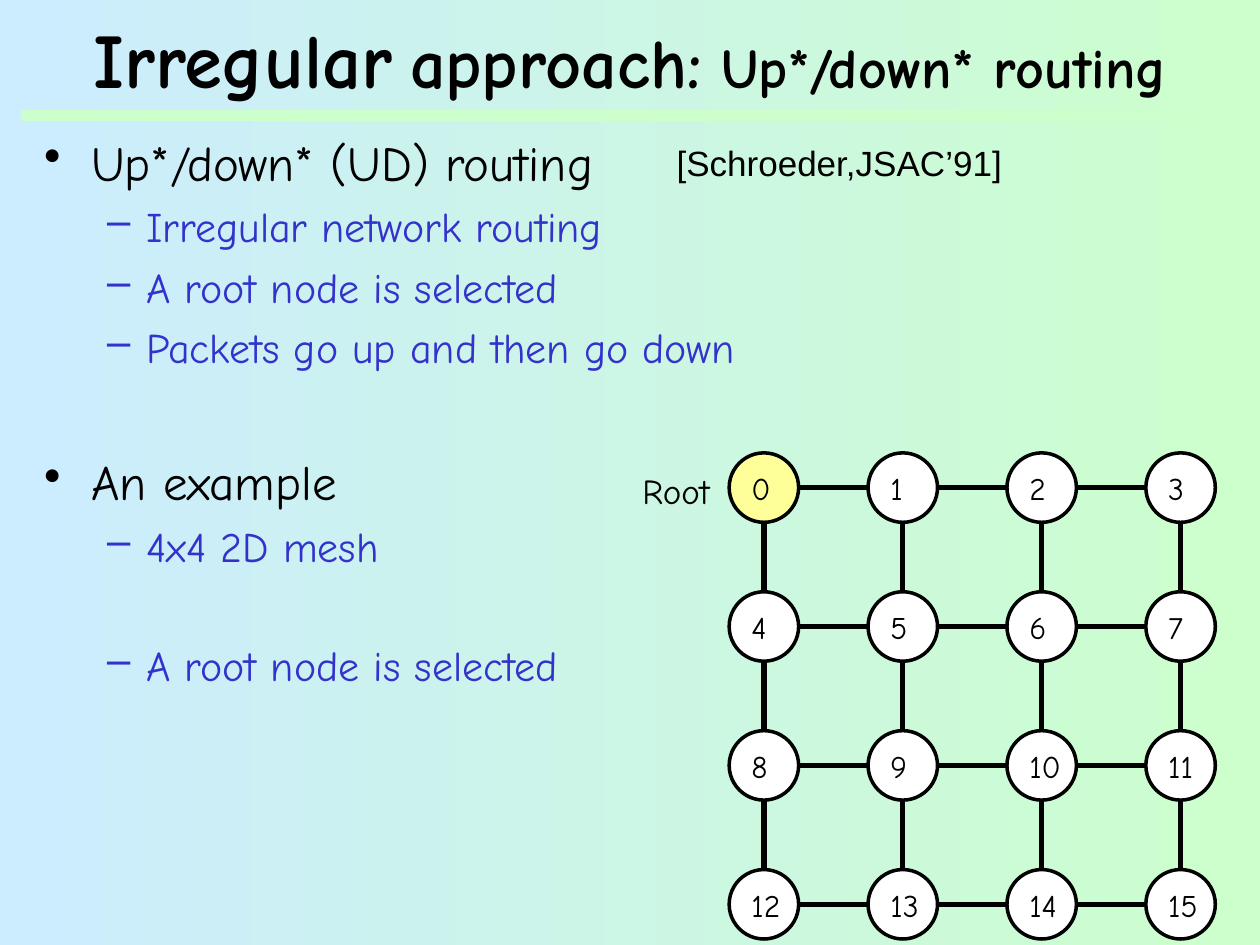
from lxml import etree
from pptx import Presentation
from pptx.dml.color import RGBColor
from pptx.enum.shapes import MSO_CONNECTOR, MSO_SHAPE
from pptx.enum.text import MSO_ANCHOR, PP_ALIGN
from pptx.oxml.ns import qn
from pptx.util import Cm, Pt

STRAIGHT, OVAL = MSO_CONNECTOR.STRAIGHT, MSO_SHAPE.OVAL
MIDDLE, TOP = MSO_ANCHOR.MIDDLE, MSO_ANCHOR.TOP
LEFT, CENTER = PP_ALIGN.LEFT, PP_ALIGN.CENTER

# Content
TITLE = [("Irregular", 44), (" ", 28), ("approach:", 40), (" Up*/down* routing", 32)]
# (level, text, space before in points)
BODY = [
    (0, "Up*/down* (UD) routing", 6.6),
    (1, "Irregular network routing", 5.6),
    (1, "A root node is selected", 5.6),
    (1, "Packets go up and then go down", 5.6),
    (0, "An example", 45.9),
    (1, "4x4 2D mesh", 5.6),
    (1, "A root node is selected", 39.3),
]
CITATION = "[Schroeder,JSAC’91]"
ROOT_LABEL = "Root"
MESH_SIZE = 4
ROOT_NODE = 0

THEME = {
    "font": "Comic Neue", "cite_font": "Arial",
    "ink": "000000", "sub": "3333CC", "rule": "CCFFCC",
    "bg": ("CCECFF", "CCFFCC"), "node": "FFFFFF", "root": "FFFF99",
    "note_size": 20, "node_size": 18,
}
# Per level: bullet, left margin and hanging indent in cm, size, colour
LEVELS = [("•", 0.95, 0.95, 28, THEME["ink"]), ("–", 2.06, 0.79, 24, THEME["sub"])]

# Mesh geometry in cm
MESH_X, MESH_Y, PITCH, NODE, INSET = 14.7, 9.13, 2.8, 1.4, 0.2


def rgb(value):
    return RGBColor.from_string(value)


def add_run(p, text, size, color=THEME["ink"], font=THEME["font"], bold=False):
    r = p.add_run()
    r.text = text
    r.font.size, r.font.name, r.font.bold = Pt(size), font, bold
    r.font.color.rgb = rgb(color)


def add_text(shapes, x, y, w, h, wrap=False, anchor=TOP, align=LEFT):
    tf = shapes.add_textbox(Cm(x), Cm(y), Cm(w), Cm(h)).text_frame
    tf.word_wrap, tf.vertical_anchor = wrap, anchor
    tf.paragraphs[0].alignment = align
    return tf


def add_line(shapes, x1, y1, x2, y2, color, width):
    line = shapes.add_connector(STRAIGHT, Cm(x1), Cm(y1), Cm(x2), Cm(y2))
    line.line.color.rgb, line.line.width = rgb(color), Pt(width)
    etree.SubElement(line._element.spPr, qn("a:effectLst"))


def add_bullet(p, level, text, before):
    char, margin, hang, size, color = LEVELS[level]
    p.level, p.space_before = level, Pt(before)
    pPr = p._p.get_or_add_pPr()
    pPr.set("marL", str(Cm(margin)))
    pPr.set("indent", str(-Cm(hang)))
    etree.SubElement(pPr, qn("a:buChar"), char=char)
    add_run(p, text, size, color)


def add_node(shapes, number, x, y):
    group = shapes.add_group_shape().shapes
    if number == ROOT_NODE:
        tf = add_text(group, x - 2, y + INSET, 2.06, 1.12)
        add_run(tf.paragraphs[0], ROOT_LABEL, THEME["note_size"])
    sp = group.add_shape(OVAL, Cm(x), Cm(y), Cm(NODE), Cm(NODE))
    sp.shadow.inherit = False
    sp.fill.solid()
    sp.fill.fore_color.rgb = rgb(THEME["root" if number == ROOT_NODE else "node"])
    sp.line.color.rgb, sp.line.width = rgb(THEME["ink"]), Pt(2)
    width = 0.91 if number < 10 else 1.2
    tf = add_text(group, x + INSET, y + INSET, width, 1.02)
    add_run(tf.paragraphs[0], str(number), THEME["node_size"])


def add_mesh(shapes):
    half = NODE / 2
    for number in range(MESH_SIZE ** 2):
        row, col = divmod(number, MESH_SIZE)
        x, y = MESH_X + col * PITCH, MESH_Y + row * PITCH
        add_node(shapes, number, x, y)
        # Links to the right and downward neighbours
        if col < MESH_SIZE - 1:
            add_line(shapes, x + NODE, y + half, x + PITCH, y + half, THEME["ink"], 3)
        if row < MESH_SIZE - 1:
            add_line(shapes, x + half, y + NODE, x + half, y + PITCH, THEME["ink"], 3)


def main():
    prs = Presentation()
    prs.slide_width, prs.slide_height = Cm(25.4), Cm(19.05)
    s = prs.slides.add_slide(prs.slide_layouts[6])

    # Background
    fill = s.background.fill
    fill.gradient()
    fill.gradient_angle = 0
    for stop, color in zip(fill.gradient_stops, THEME["bg"]):
        stop.color.rgb = rgb(color)

    # Title and rule
    add_line(s.shapes, 0.42, 2.33, 25.2, 2.33, THEME["rule"], 6)
    tf = add_text(s.shapes, 0, 0.21, 25.4, 1.91, True, MIDDLE, CENTER)
    for text, size in TITLE:
        add_run(tf.paragraphs[0], text, size, bold=True)

    # Bullets
    tf = add_text(s.shapes, 0.64, 2.54, 15.06, 6.58, True)
    for i, (level, text, before) in enumerate(BODY):
        p = tf.add_paragraph() if i else tf.paragraphs[0]
        add_bullet(p, level, text, before)

    # Citation and mesh
    tf = add_text(s.shapes, 13.39, 2.72, 7.14, 1.12)
    add_run(tf.paragraphs[0], CITATION, THEME["note_size"], font=THEME["cite_font"])
    add_mesh(s.shapes)

    prs.save("out.pptx")


if __name__ == "__main__":
    main()
